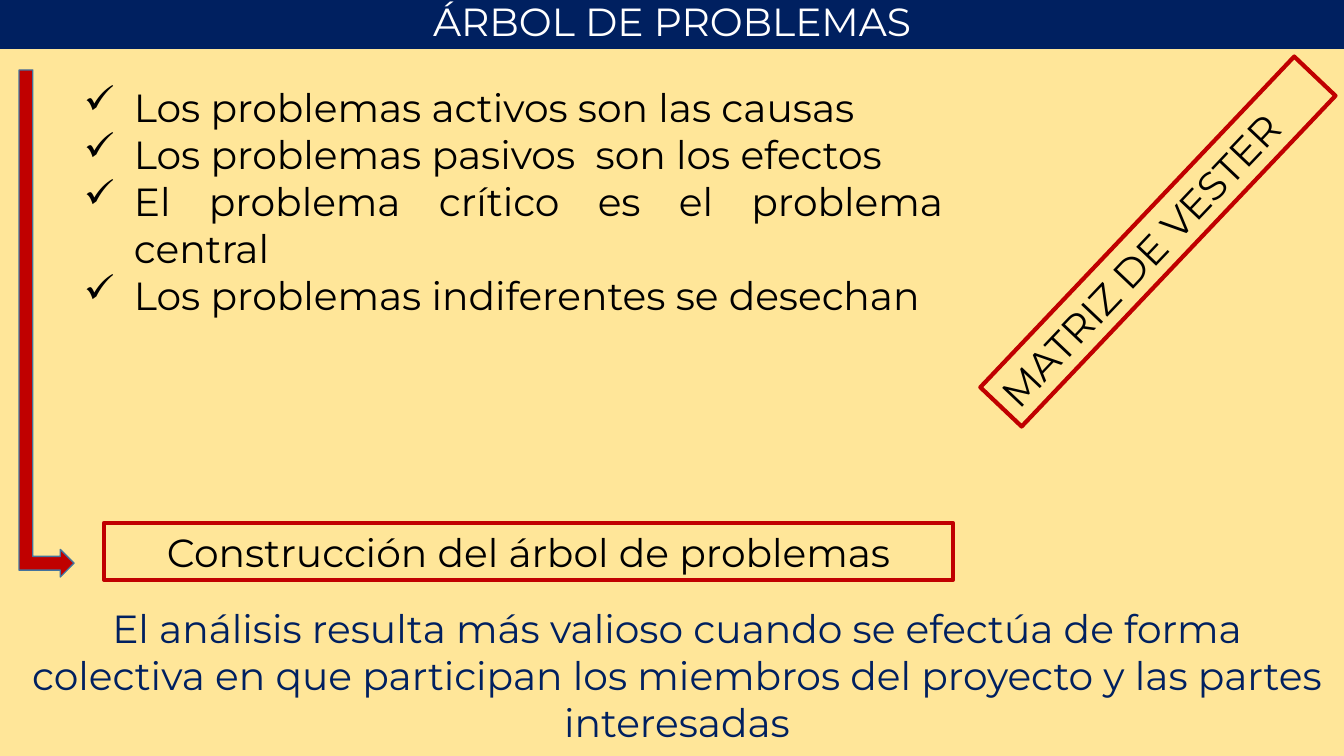
from lxml.etree import SubElement
from pptx import Presentation
from pptx.dml.color import RGBColor
from pptx.enum.shapes import MSO_SHAPE as Shape
from pptx.enum.text import MSO_ANCHOR as Anchor, MSO_AUTO_SIZE as AutoSize, PP_ALIGN as Align
from pptx.oxml.ns import qn
from pptx.util import Pt

SCALE = 914400 / 100.8
COLORS = {
    "cream": "FFE699",
    "navy": "002060",
    "red": "C00000",
    "edge": "43739E",
    "white": "FFFFFF",
    "black": "000000",
}
FONT = {"name": "Montserrat", "size": Pt(28)}
FRAME = {"word_wrap": True, "vertical_anchor": Anchor.TOP}

FINDINGS = [
    "Los problemas activos son las causas",
    "Los problemas pasivos  son los efectos",
    "El problema crítico es el problema central",
    "Los problemas indiferentes se desechan",
]
CLOSING = (
    "El análisis resulta más valioso cuando se efectúa de forma colectiva "
    "en que participan los miembros del proyecto y las partes interesadas"
)


def px(length):
    return round(length * SCALE)


def color(name):
    return RGBColor.from_string(COLORS[name])


def apply(target, values):
    for name, value in values.items():
        setattr(target, name, value)


def add_block(page, kind, place, fill=None, line=None, weight=3, turn=0):
    box = page.shapes.add_shape(kind, *map(px, place))
    box.shadow.inherit = False
    box.rotation = turn
    if fill:
        box.fill.solid()
        box.fill.fore_color.rgb = color(fill)
    else:
        box.fill.background()
    if line:
        box.line.color.rgb = color(line)
        box.line.width = Pt(weight)
    else:
        box.line.fill.background()
    return box


def add_textbox(page, place):
    return page.shapes.add_textbox(*map(px, place))


def add_check(para):
    props = para._p.get_or_add_pPr()
    props.set("marL", str(px(50)))
    props.set("indent", str(px(-50)))
    SubElement(props, qn("a:buChar")).set("char", "✓")


def write(box, lines, ink="black", align=Align.CENTER, checks=False, size=AutoSize.SHAPE_TO_FIT_TEXT):
    frame = box.text_frame
    apply(frame, {**FRAME, "auto_size": size})
    for index, line in enumerate(lines):
        para = frame.add_paragraph() if index else frame.paragraphs[0]
        para.alignment = align
        if checks:
            add_check(para)
        span = para.add_run()
        span.text = line
        apply(span.font, FONT)
        span.font.color.rgb = color(ink)


def main():
    deck = Presentation()
    apply(deck, {"slide_width": px(1344), "slide_height": px(756)})
    page = deck.slides.add_slide(deck.slide_layouts[6])

    add_block(page, Shape.RECTANGLE, (0, -9, 1344, 773), fill="cream")
    title = add_block(page, Shape.RECTANGLE, (0, -8, 1344, 57), fill="navy")
    write(title, ["ÁRBOL DE PROBLEMAS"], ink="white")

    add_block(page, Shape.BENT_UP_ARROW, (-207, 296, 507, 55), fill="red", line="edge", weight=1, turn=90)
    result = add_block(page, Shape.RECTANGLE, (104, 523, 849, 57), line="red")
    write(result, ["Construcción del árbol de problemas"])
    matrix = add_block(page, Shape.RECTANGLE, (930, 213, 456, 57), line="red", turn=313.5)
    write(matrix, ["MATRIZ DE VESTER"], align=Align.LEFT)

    findings = add_textbox(page, (74, 78, 879, 390))
    write(findings, FINDINGS, align=Align.JUSTIFY, checks=True, size=AutoSize.NONE)
    closing = add_textbox(page, (19, 599, 1316, 152))
    write(closing, [CLOSING], ink="navy")

    deck.save("out.pptx")


if __name__ == "__main__":
    main()
